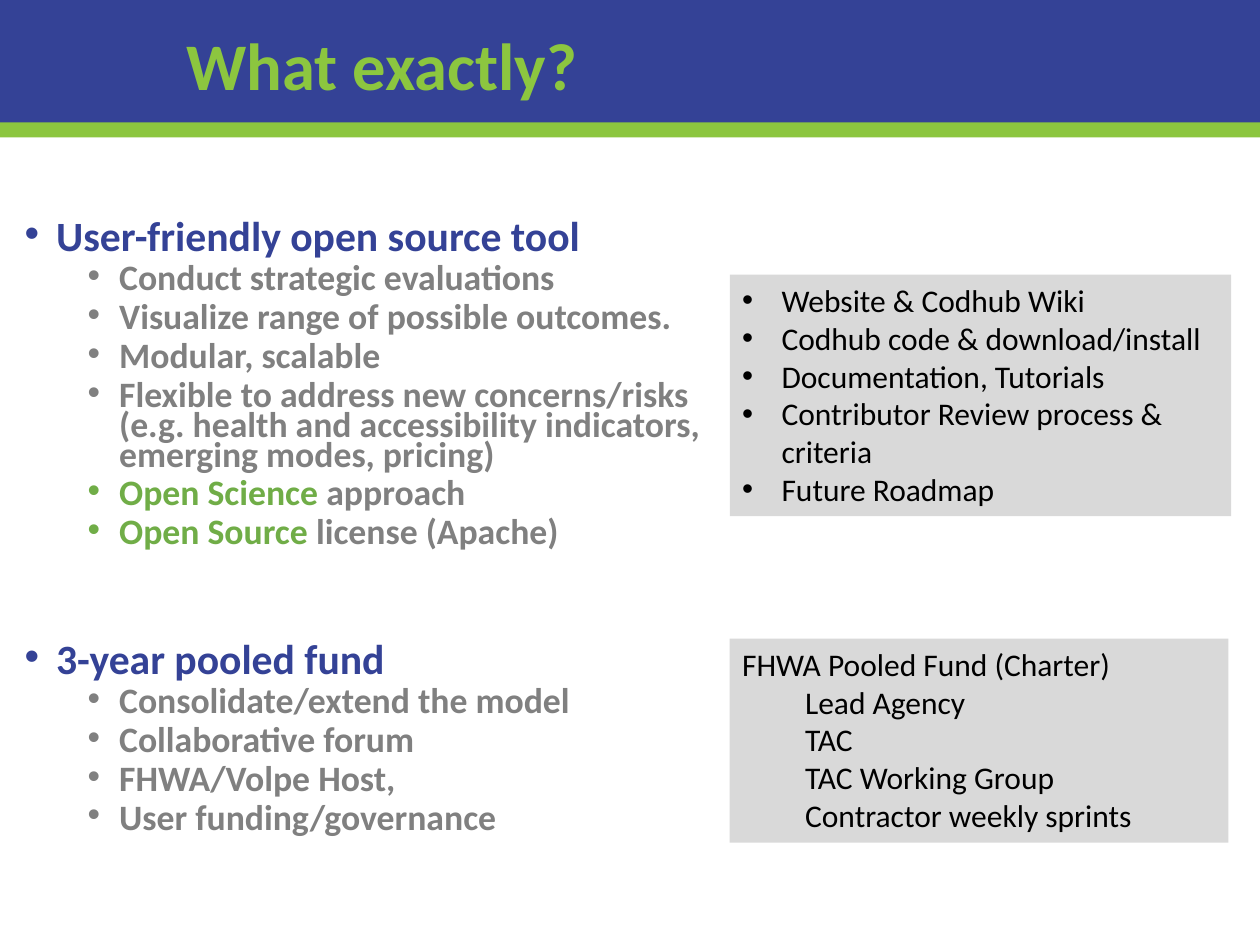
from dataclasses import dataclass

from lxml import etree
from pptx import Presentation
from pptx.dml.color import RGBColor
from pptx.enum.shapes import MSO_SHAPE
from pptx.enum.text import MSO_ANCHOR, MSO_AUTO_SIZE, PP_ALIGN
from pptx.oxml.ns import qn
from pptx.util import Pt

RECTANGLE = MSO_SHAPE.RECTANGLE
TOP, MIDDLE = MSO_ANCHOR.TOP, MSO_ANCHOR.MIDDLE
GROW = MSO_AUTO_SIZE.SHAPE_TO_FIT_TEXT
LEFT = PP_ALIGN.LEFT
SLIDE_WIDTH, SLIDE_HEIGHT = 720, 540


@dataclass(frozen=True)
class Theme:
    font: str = "Calibri"
    bullet_font: str = "Arial"
    blue: str = "344296"
    lime: str = "8CC63F"
    green: str = "70AD47"
    gray: str = "808080"
    panel: str = "D9D9D9"
    black: str = "000000"
    title_size: float = 38
    heading_size: float = 23.8
    item_size: float = 20.4
    panel_size: float = 18


THEME = Theme()


@dataclass(frozen=True)
class Area:
    left: float
    top: float
    width: float
    height: float

    def lengths(self) -> tuple:
        return Pt(self.left), Pt(self.top), Pt(self.width), Pt(self.height)


@dataclass(frozen=True)
class Style:
    size: float
    color: str
    bold: bool = False
    margin: float = 0
    hanging: float = 0
    line_spacing: float = 1.0
    space_before: float = 0


@dataclass(frozen=True)
class Line:
    text: str
    style: Style
    lead: str = ""  # green opening words


TITLE = Style(THEME.title_size, THEME.lime, True, line_spacing=0.9)
HEADING = Style(THEME.heading_size, THEME.blue, True, 18, 18, 0.7)
SECOND_HEADING = Style(THEME.heading_size, THEME.blue, True, 18, 18, 0.7, 54.5)
ITEM = Style(THEME.item_size, THEME.gray, True, 54, 18, 0.7, 5)
PANEL_BULLET = Style(THEME.panel_size, THEME.black, margin=22.5, hanging=22.5)
PANEL_PLAIN = Style(THEME.panel_size, THEME.black)
PANEL_INDENTED = Style(THEME.panel_size, THEME.black, margin=36)

BODY_LINES = [
    Line("User-friendly open source tool", HEADING),
    Line("Conduct strategic evaluations", ITEM),
    Line("Visualize range of possible outcomes.", ITEM),
    Line("Modular, scalable", ITEM),
    Line("Flexible to address new concerns/risks (e.g. health and "
         "accessibility indicators, emerging modes, pricing)", ITEM),
    Line("approach", ITEM, "Open Science "),
    Line("license (Apache)", ITEM, "Open Source "),
    Line("3-year pooled fund", SECOND_HEADING),
    Line("Consolidate/extend the model", ITEM),
    Line("Collaborative forum", ITEM),
    Line("FHWA/Volpe Host,", ITEM),
    Line("User funding/governance", ITEM),
]
RESOURCE_LINES = [Line(text, PANEL_BULLET) for text in (
    "Website & Codhub Wiki",
    "Codhub code & download/install",
    "Documentation, Tutorials",
    "Contributor Review process & criteria",
    "Future Roadmap",
)]
FUND_LINES = [Line("FHWA Pooled Fund (Charter)", PANEL_PLAIN)] + [
    Line(text, PANEL_INDENTED) for text in (
        "Lead Agency", "TAC", "TAC Working Group", "Contractor weekly sprints")
]


def indent(para, style: Style) -> None:
    """Set the left margin, and a hanging bullet where the style has one."""
    properties = para._p.get_or_add_pPr()
    properties.set("marL", str(Pt(style.margin)))
    properties.set("indent", str(-Pt(style.hanging)))
    if style.hanging:
        etree.SubElement(properties, qn("a:buFont"), typeface=THEME.bullet_font)
        etree.SubElement(properties, qn("a:buChar"), char="•")


def format_span(span, style: Style, color: str) -> None:
    span.font.name = THEME.font
    span.font.size = Pt(style.size)
    span.font.bold = style.bold
    span.font.color.rgb = RGBColor.from_string(color)


def write_lines(frame, lines: list[Line], anchor=TOP) -> None:
    frame.word_wrap = True
    frame.vertical_anchor = anchor
    for index, line in enumerate(lines):
        para = frame.add_paragraph() if index else frame.paragraphs[0]
        indent(para, line.style)
        para.alignment = LEFT
        para.line_spacing = line.style.line_spacing
        para.space_before = Pt(line.style.space_before)
        para.text = line.lead or line.text
        format_span(para.runs[0], line.style,
                    THEME.green if line.lead else line.style.color)
        if line.lead:
            span = para.add_run()
            span.text = line.text
            format_span(span, line.style, line.style.color)


def add_block(page, area: Area, color: str):
    block = page.shapes.add_shape(RECTANGLE, *area.lengths())
    block.shadow.inherit = False
    block.fill.solid()
    block.fill.fore_color.rgb = RGBColor.from_string(color)
    block.line.fill.background()
    return block


def add_text(page, area: Area, lines: list[Line], anchor=TOP) -> None:
    box = page.shapes.add_textbox(*area.lengths())
    write_lines(box.text_frame, lines, anchor)


def add_panel(page, area: Area, lines: list[Line]) -> None:
    panel = add_block(page, area, THEME.panel)
    write_lines(panel.text_frame, lines)
    panel.text_frame.auto_size = GROW


def main() -> None:
    deck = Presentation()
    deck.slide_width, deck.slide_height = Pt(SLIDE_WIDTH), Pt(SLIDE_HEIGHT)
    page = deck.slides.add_slide(deck.slide_layouts[6])

    # Header bands and title
    add_block(page, Area(0, 50, SLIDE_WIDTH, 28.5), THEME.lime)
    add_block(page, Area(0, 0, SLIDE_WIDTH, 70), THEME.blue)
    add_text(page, Area(99.5, 15, 620.5, 49),
             [Line("What exactly?", TITLE)], MIDDLE)

    # Main bullet list
    add_text(page, Area(7, 124, 428.5, 386.5), BODY_LINES)

    # Side panels
    add_panel(page, Area(417, 157, 286.5, 138), RESOURCE_LINES)
    add_panel(page, Area(417, 365, 285, 116.5), FUND_LINES)

    deck.save("out.pptx")


if __name__ == "__main__":
    main()
